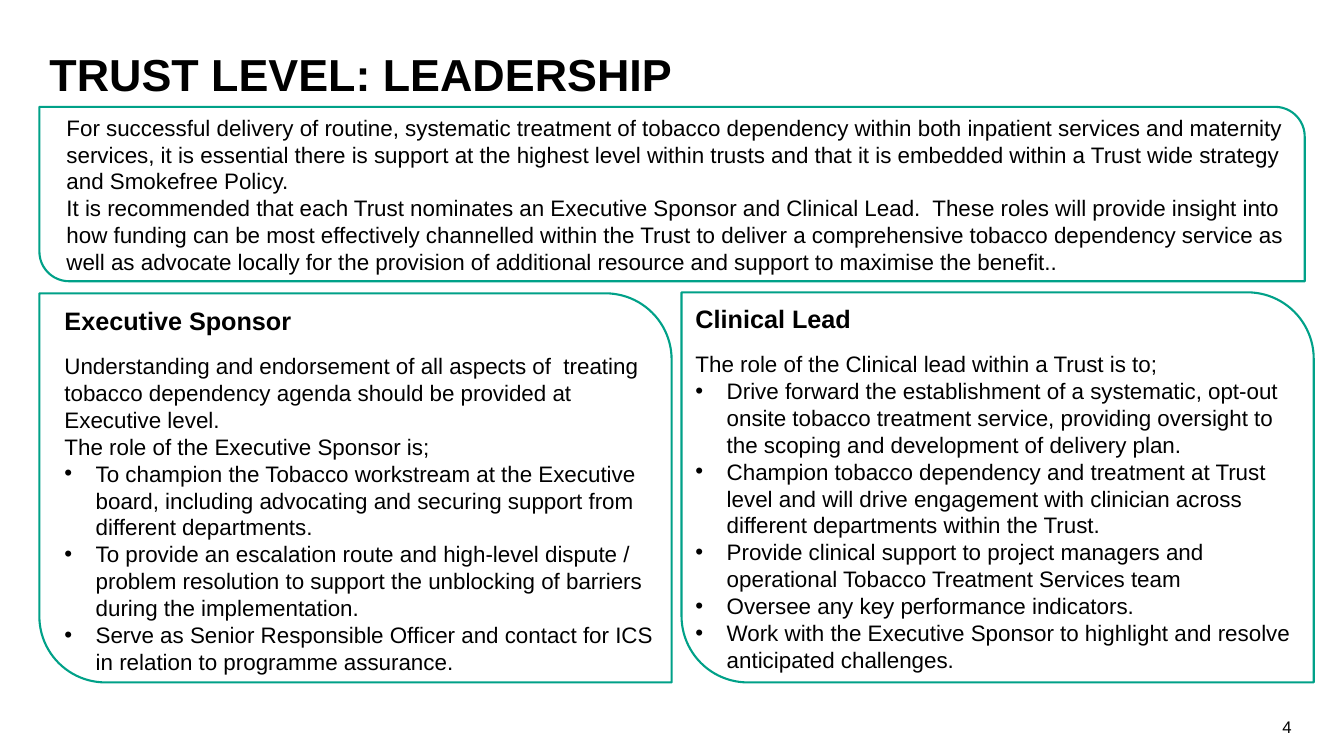
from collections import namedtuple

from lxml import etree
from pptx import Presentation
from pptx import util as u
from pptx.dml.color import RGBColor
from pptx.enum import shapes, text
from pptx.oxml.ns import qn

BLACK = RGBColor(0x00, 0x00, 0x00)
TEAL = RGBColor(0x00, 0xA1, 0x88)
FONT = "Arial"
WIDTH, HEIGHT = u.Inches(13.33), u.Inches(7.5)
COLUMN, ROW = WIDTH / 100, HEIGHT / 100  # a grid of 100 by 100
HANG = u.Inches(0.31)

Box = namedtuple("Box", "left top width height")

TITLE_BOX = Box(2.93, 6.27, 93.92, 10.53)
INTRO_BOX = Box(2.93, 14.13, 94.15, 23.07)
SPONSOR_BOX = Box(2.93, 38.8, 47.04, 51.47)
LEAD_BOX = Box(50.71, 38.67, 47.04, 51.6)
NUMBER_BOX = Box(90.62, 92.67, 6.23, 5.33)

INTRO = [
    "For successful delivery of routine, systematic treatment of tobacco dependency within both "
    "inpatient services and maternity services, it is essential there is support at the highest "
    "level within trusts and that it is embedded within a Trust wide strategy and Smokefree Policy.",
    "It is recommended that each Trust nominates an Executive Sponsor and Clinical Lead.  These "
    "roles will provide insight into how funding can be most effectively channelled within the "
    "Trust to deliver a comprehensive tobacco dependency service as well as advocate locally for "
    "the provision of additional resource and support to maximise the benefit..",
]
SPONSOR_LEAD_IN = [
    "Understanding and endorsement of all aspects of  treating tobacco dependency agenda should "
    "be provided at Executive level.",
    "The role of the Executive Sponsor is;",
]
SPONSOR_DUTIES = [
    "To champion the Tobacco workstream at the Executive board, including advocating and securing "
    "support from different departments.",
    "To provide an escalation route and high-level dispute / problem resolution to support the "
    "unblocking of barriers during the implementation.",
    "Serve as Senior Responsible Officer and contact for ICS in relation to programme assurance.",
]
CLINICAL_LEAD_IN = ["The role of the Clinical lead within a Trust is to;"]
CLINICAL_DUTIES = [
    "Drive forward the establishment of a systematic, opt-out onsite tobacco treatment service, "
    "providing oversight to the scoping and development of delivery plan.",
    "Champion tobacco dependency and treatment at Trust level and will drive engagement with "
    "clinician across different departments within the Trust.",
    "Provide clinical support to project managers and operational Tobacco Treatment Services team",
    "Oversee any key performance indicators.",
    "Work with the Executive Sponsor to highlight and resolve anticipated challenges.",
]


def to_emu(box):
    return (round(box.left * COLUMN), round(box.top * ROW),
            round(box.width * COLUMN), round(box.height * ROW))


def add_run(paragraph, wording, size, bold=False):
    run = paragraph.add_run()
    run.text = wording
    run.font.name, run.font.size, run.font.bold = FONT, u.Pt(size), bold
    run.font.color.rgb = BLACK


def add_bullet(paragraph):
    properties = paragraph._p.get_or_add_pPr()
    properties.set("marL", str(HANG))
    properties.set("indent", str(-HANG))
    etree.SubElement(properties, qn("a:buFont")).set("typeface", FONT)
    etree.SubElement(properties, qn("a:buChar")).set("char", "•")


def add_text_frame(slide, box):
    frame = slide.shapes.add_textbox(*to_emu(box)).text_frame
    frame.word_wrap = True
    return frame


def add_panel(slide, box, inset_x, inset_y):
    """Outline the box and return the text frame laid inside it."""
    outline = slide.shapes.add_shape(
        shapes.MSO_SHAPE.ROUND_2_DIAG_RECTANGLE, *to_emu(box))
    outline.adjustments[0], outline.adjustments[1] = 0, 0.17
    outline.shadow.inherit = False
    outline.fill.background()
    outline.line.color.rgb = TEAL
    outline.line.width = u.Pt(1.5)
    return add_text_frame(slide, Box(box.left + inset_x, box.top + inset_y,
                                     box.width - inset_x, box.height - inset_y))


def add_title(slide, box, wording):
    title = slide.shapes.title
    title.left, title.top, title.width, title.height = to_emu(box)
    frame = title.text_frame
    frame.word_wrap = True
    frame.auto_size = text.MSO_AUTO_SIZE.NONE
    frame.vertical_anchor = text.MSO_ANCHOR.TOP
    heading = frame.paragraphs[0]
    heading.alignment = text.PP_ALIGN.LEFT
    heading.line_spacing = 0.9
    add_run(heading, wording, 32, bold=True)


def add_intro(slide, box):
    frame = add_panel(slide, box, 1.28, 0.27)
    for index, wording in enumerate(INTRO):
        paragraph = frame.add_paragraph() if index else frame.paragraphs[0]
        add_run(paragraph, wording, 16)


def add_role(slide, box, inset, role, lead_in, duties):
    frame = add_panel(slide, box, *inset)
    add_run(frame.paragraphs[0], role, 18, bold=True)
    for index, wording in enumerate(lead_in):
        paragraph = frame.add_paragraph()
        if index == 0:
            paragraph.space_before = u.Pt(12)
        add_run(paragraph, wording, 16)
    for duty in duties:
        paragraph = frame.add_paragraph()
        add_bullet(paragraph)
        add_run(paragraph, duty, 16)


def add_page_number(slide, box, number):
    frame = add_text_frame(slide, box)
    frame.vertical_anchor = text.MSO_ANCHOR.BOTTOM
    frame.margin_top = frame.margin_bottom = u.Inches(0.04)
    frame.paragraphs[0].alignment = text.PP_ALIGN.RIGHT
    add_run(frame.paragraphs[0], number, 12)


def main():
    deck = Presentation()
    deck.slide_width, deck.slide_height = WIDTH, HEIGHT
    slide = deck.slides.add_slide(deck.slide_layouts[5])
    add_title(slide, TITLE_BOX, "TRUST LEVEL: LEADERSHIP")
    add_page_number(slide, NUMBER_BOX, "4")
    add_intro(slide, INTRO_BOX)
    add_role(slide, SPONSOR_BOX, (1.13, 0.93), "Executive Sponsor",
             SPONSOR_LEAD_IN, SPONSOR_DUTIES)
    add_role(slide, LEAD_BOX, (0.3, 0.8), "Clinical Lead",
             CLINICAL_LEAD_IN, CLINICAL_DUTIES)
    deck.save("out.pptx")


if __name__ == "__main__":
    main()
